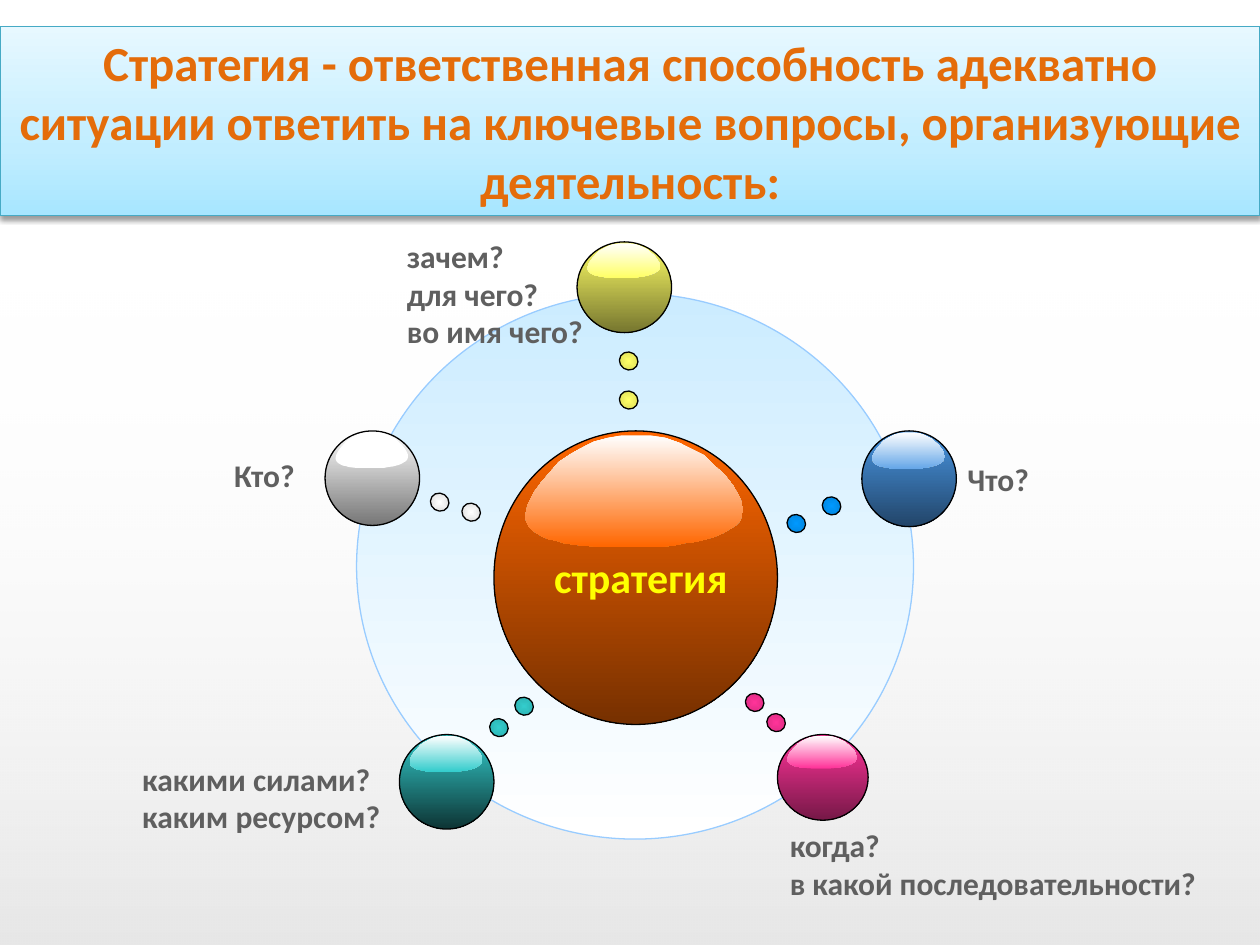
from pptx import Presentation
from pptx.dml.color import RGBColor
from pptx.enum.shapes import MSO_SHAPE
from pptx.enum.text import MSO_ANCHOR, MSO_AUTO_SIZE, PP_ALIGN
from pptx.oxml import parse_xml
from pptx.oxml.ns import nsdecls
from pptx.util import Inches, Pt

BLACK = RGBColor(0x00, 0x00, 0x00)
WHITE = RGBColor(0xFF, 0xFF, 0xFF)
TITLE_ORANGE = RGBColor(0xE4, 0x6C, 0x0A)
TITLE_EDGE = RGBColor(0x46, 0xAA, 0xC5)
TITLE_LOW = RGBColor(0xA7, 0xE6, 0xFF)
TITLE_MID = RGBColor(0xC1, 0xED, 0xFF)
TITLE_HIGH = RGBColor(0xE7, 0xF8, 0xFF)
RING_BLUE = RGBColor(0xCC, 0xEC, 0xFF)
RING_EDGE = RGBColor(0x99, 0xCC, 0xFF)
LABEL_GRAY = RGBColor(0x5F, 0x5F, 0x5F)
CENTRE_YELLOW = RGBColor(0xFF, 0xFF, 0x00)
ORANGE, ORANGE_DARK = RGBColor(0xFF, 0x66, 0x00), RGBColor(0x76, 0x30, 0x00)
YELLOW, YELLOW_DARK = RGBColor(0xFF, 0xFF, 0x66), RGBColor(0x76, 0x76, 0x2F)
TEAL, TEAL_DARK = RGBColor(0x33, 0xCC, 0xCC), RGBColor(0x0D, 0x34, 0x34)
BLUE, BLUE_DARK = RGBColor(0x49, 0x96, 0xE3), RGBColor(0x22, 0x45, 0x69)
PINK, PINK_DARK = RGBColor(0xFF, 0x33, 0x99), RGBColor(0x76, 0x18, 0x47)
GRAY_DARK = RGBColor(0x76, 0x76, 0x76)
BLUE_GLOSS = RGBColor(0x66, 0xA7, 0xE8)
YELLOW_RIM = RGBColor(0xD6, 0xD6, 0x56)
TEAL_RIM = RGBColor(0x2B, 0xAB, 0xAB)
BLUE_DOT, BLUE_RIM = RGBColor(0x00, 0x99, 0xFF), RGBColor(0x00, 0x80, 0xD6)
PINK_RIM = RGBColor(0xD6, 0x2B, 0x80)
WHITE_RIM = RGBColor(0xD6, 0xD6, 0xD6)

# Outline of a gloss highlight on a grid of 174 by 88
GLOSS = [
    (171, 49), (173, 54), (174, 59), (173, 63), (171, 68), (168, 71), (163, 74),
    (158, 77), (151, 80), (144, 82), (136, 84), (127, 85), (118, 87), (105, 88),
    (63, 88), (46, 87), (38, 86), (31, 85), (25, 83), (19, 82), (14, 80),
    (9, 77), (6, 75), (3, 72), (1, 68), (0, 64), (1, 60), (2, 55), (7, 45),
    (13, 37), (20, 29), (27, 21), (36, 15), (45, 10), (55, 5), (66, 2),
    (77, 0), (100, 0), (112, 2), (123, 6), (133, 11), (143, 16), (151, 24),
    (159, 31), (166, 40),
]


def paint(shape, stops, edge=None, angle=90, radial=False):
    """Gradient fill from (percent, colour, opacity) stops, and an outline."""
    shape.shadow.inherit = False
    marks = "".join(
        f'<a:gs pos="{place * 1000}"><a:srgbClr val="{color}">'
        f'<a:alpha val="{opacity * 1000}"/></a:srgbClr></a:gs>'
        for place, color, opacity in stops)
    direction = f'<a:lin ang="{angle * 60000}" scaled="0"/>'
    if radial:
        direction = ('<a:path path="shape"><a:fillToRect l="50000" t="50000" '
                     'r="50000" b="50000"/></a:path>')
    gradient = parse_xml(f'<a:gradFill {nsdecls("a")} rotWithShape="1">'
                         f'<a:gsLst>{marks}</a:gsLst>{direction}</a:gradFill>')
    shape.fill.background()
    blank = shape.element.spPr.find("{*}noFill")
    shape.element.spPr.replace(blank, gradient)
    if edge is None:
        shape.line.fill.background()
    else:
        shape.line.color.rgb = edge
        shape.line.width = Pt(0.75)


def add_text(page, left, top, width, height, lines, size, color):
    box = page.shapes.add_textbox(Inches(left), Inches(top),
                                  Inches(width), Inches(height))
    box.text_frame.word_wrap = True
    box.text_frame.text = lines
    for para in box.text_frame.paragraphs:
        para.font.name = "Calibri"
        para.font.size = Pt(size)
        para.font.bold = True
        para.font.color.rgb = color
    return box


deck = Presentation()
deck.slide_width, deck.slide_height = Inches(10), Inches(7.5)
page = deck.slides.add_slide(deck.slide_layouts[5])

# Title band
title = page.shapes.title
title.left, title.top = Inches(0), Inches(0.21)
title.width, title.height = Inches(10), Inches(1.5)
paint(title, [(0, TITLE_LOW, 100), (35, TITLE_MID, 100), (100, TITLE_HIGH, 100)],
      TITLE_EDGE, angle=270)
title.element.spPr.find("{*}effectLst").append(parse_xml(
    f'<a:outerShdw {nsdecls("a")} blurRad="{Pt(3.1)}" dist="{Pt(1.6)}" '
    'dir="5400000" rotWithShape="0"><a:srgbClr val="000000">'
    '<a:alpha val="38000"/></a:srgbClr></a:outerShdw>'))
frame = title.text_frame
frame.text = ("Стратегия - ответственная способность адекватно ситуации "
              "ответить на ключевые вопросы, организующие деятельность:")
frame.word_wrap = True
frame.auto_size = MSO_AUTO_SIZE.NONE
frame.vertical_anchor = MSO_ANCHOR.MIDDLE
heading = frame.paragraphs[0]
heading.alignment = PP_ALIGN.CENTER
heading.font.name = "Calibri"
heading.font.size = Pt(28)
heading.font.bold = True
heading.font.color.rgb = TITLE_ORANGE

# Shaded floor and large ring
floor = page.shapes.add_shape(MSO_SHAPE.RECTANGLE, Inches(0), Inches(2.21),
                              Inches(10), Inches(5.29))
paint(floor, [(0, BLACK, 10), (100, WHITE, 0)], angle=270)
ring = page.shapes.add_shape(MSO_SHAPE.OVAL, Inches(2.83), Inches(2.33),
                             Inches(4.42), Inches(4.33))
paint(ring, [(0, RING_BLUE, 100), (100, WHITE, 100)], RING_EDGE)

# Glossy spheres: left, top, width, height, top colour, bottom colour, gloss end
spheres = [
    (3.92, 3.42, 2.25, 2.33, ORANGE, ORANGE_DARK, ORANGE),
    (4.58, 1.92, 0.75, 0.72, YELLOW, YELLOW_DARK, YELLOW),
    (3.17, 5.83, 0.75, 0.75, TEAL, TEAL_DARK, TEAL),
    (6.84, 3.42, 0.75, 0.76, BLUE, BLUE_DARK, BLUE_GLOSS),
    (6.17, 5.83, 0.72, 0.68, PINK, PINK_DARK, PINK),
    (2.58, 3.42, 0.75, 0.75, WHITE, GRAY_DARK, WHITE),
]
for left, top, width, height, light, dark, gloss_end in spheres:
    sphere = page.shapes.add_shape(MSO_SHAPE.OVAL, Inches(left), Inches(top),
                                   Inches(width), Inches(height))
    paint(sphere, [(0, light, 100), (100, dark, 100)], BLACK)
    scale = (Inches(0.77 * width) / 174, Inches(0.38 * height) / 88)
    outline = page.shapes.build_freeform(*GLOSS[0], scale=scale)
    outline.add_line_segments(GLOSS[1:], close=True)
    gloss = outline.convert_to_shape(Inches(left + 0.11 * width),
                                     Inches(top + 0.015 * height))
    paint(gloss, [(0, WHITE, 100), (100, gloss_end, 100)])

# Dots leading from the centre to each sphere
dots = [
    (TEAL, TEAL_RIM, [(3.89, 5.7), (4.09, 5.53)]),
    (PINK, PINK_RIM, [(6.09, 5.66), (5.92, 5.5)]),
    (WHITE, WHITE_RIM, [(3.42, 3.91), (3.67, 3.99)]),
    (YELLOW, YELLOW_RIM, [(4.92, 2.79), (4.92, 3.1)]),
    (BLUE_DOT, BLUE_RIM, [(6.53, 3.94), (6.25, 4.08)]),
]
for middle, rim, places in dots:
    for left, top in places:
        dot = page.shapes.add_shape(MSO_SHAPE.OVAL, Inches(left), Inches(top),
                                    Inches(0.14), Inches(0.15))
        dot.rotation = 303.8
        paint(dot, [(0, middle, 100), (100, rim, 100)], BLACK, radial=True)

# Centre word and questions
centre = add_text(page, 4.29, 4.33, 1.59, 0.5, "стратегия", 24, CENTRE_YELLOW)
centre.text_frame.word_wrap = False
centre.text_frame.paragraphs[0].alignment = PP_ALIGN.CENTER
questions = [
    (1.76, 3.57, 0.81, 0.4, "Кто?"),
    (3.13, 1.83, 2.08, 1.01, "зачем? \vдля чего?\nво имя чего?"),
    (7.58, 3.6, 0.88, 0.4, "Что?"),
    (1.03, 5.98, 2.58, 0.71, "какими силами? \vкаким ресурсом?"),
    (6.17, 6.51, 3.66, 0.71, "когда? \vв какой последовательности?"),
]
for left, top, width, height, lines in questions:
    add_text(page, left, top, width, height, lines, 18, LABEL_GRAY)

deck.save("out.pptx")
